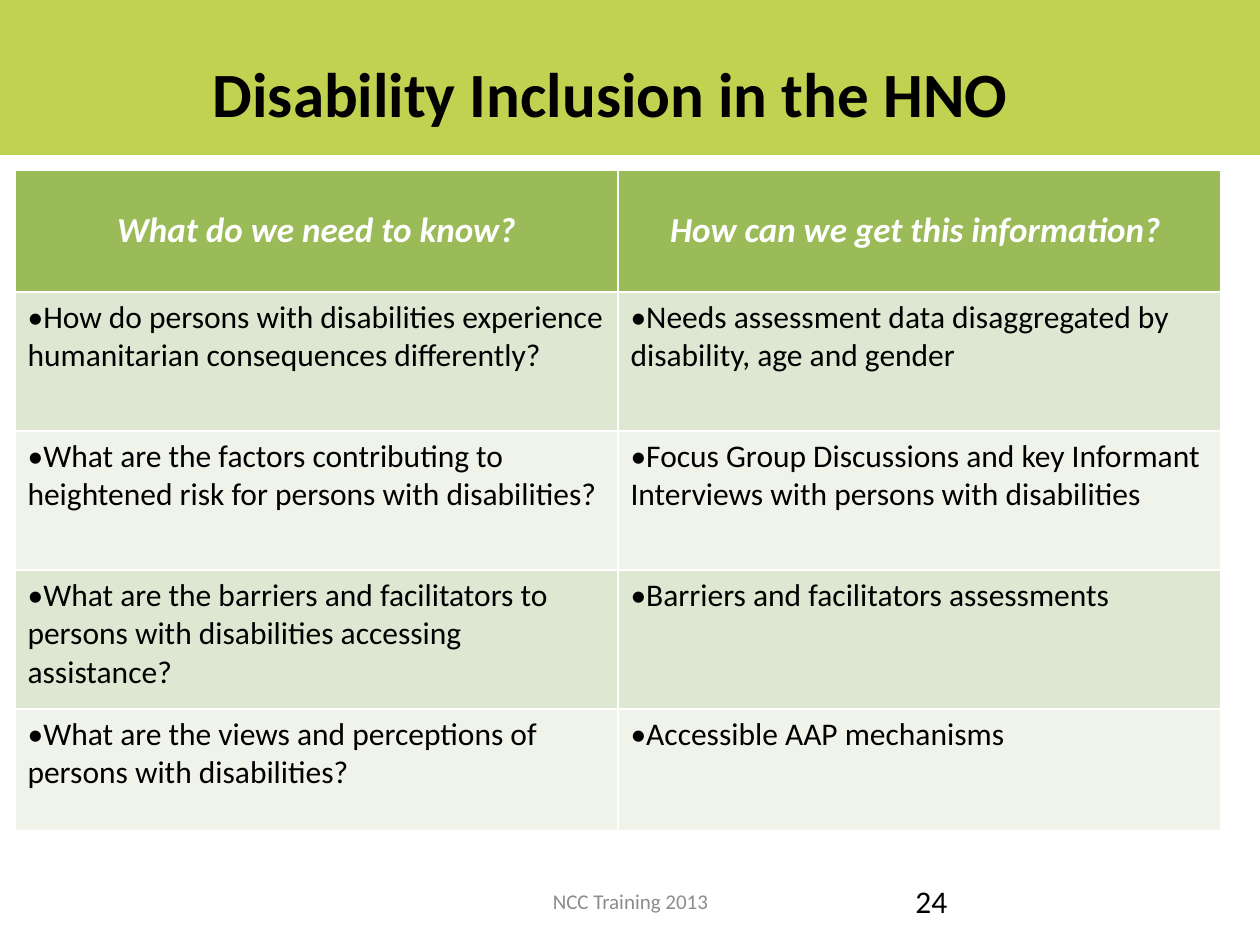
"""Build the Disability Inclusion in the HNO slide with its question table."""
from dataclasses import dataclass

from pptx import Presentation
from pptx import util as u
from pptx.dml.color import RGBColor
from pptx.enum import shapes, text

EMU_PER_PX = 914400 / 126


@dataclass(frozen=True)
class Theme:
    font: str = "Calibri"
    banner: str = "C1D150"
    header: str = "9BBB59"
    bands: tuple[str, str] = ("DEE7D1", "EFF3EA")
    black: str = "000000"
    white: str = "FFFFFF"
    grey: str = "8C8C8C"
    title_size: int = 36
    header_size: int = 20
    body_size: int = 18
    footer_size: int = 12


@dataclass(frozen=True)
class Box:
    left: int
    top: int
    width: int
    height: int

    def emu(self) -> tuple[int, ...]:
        return tuple(px(v) for v in (self.left, self.top, self.width, self.height))


@dataclass(frozen=True)
class Style:
    size: int
    color: str
    bold: bool = False
    italic: bool = False
    align: text.PP_ALIGN = text.PP_ALIGN.LEFT
    anchor: text.MSO_ANCHOR = text.MSO_ANCHOR.TOP


@dataclass(frozen=True)
class Label:
    words: str
    box: Box
    style: Style


THEME = Theme()
CENTER, MIDDLE = text.PP_ALIGN.CENTER, text.MSO_ANCHOR.MIDDLE
HEADER = Style(THEME.header_size, THEME.white, True, True, CENTER, MIDDLE)
BODY = Style(THEME.body_size, THEME.black)

BANNER = Box(0, -2, 1260, 157)
LABELS = (
    Label("NCC Training 2013", Box(431, 876, 399, 50),
          Style(THEME.footer_size, THEME.grey, align=CENTER, anchor=MIDDLE)),
    Label("24", Box(903, 876, 294, 50), BODY),
    Label("Disability Inclusion in the HNO", Box(34, 48, 1153, 89),
          Style(THEME.title_size, THEME.black, bold=True, align=CENTER)),
)
TABLE = Box(15, 170, 1206, 661)
ROW_HEIGHTS = (122, 139, 139, 139, 122)
ROWS = (
    ("What do we need to know?", "How can we get this information? "),
    ("•How do persons with disabilities experience humanitarian consequences differently?",
     "•Needs assessment data disaggregated by disability, age and gender"),
    ("•What are the factors contributing to heightened risk for persons with disabilities?",
     "•Focus Group Discussions and key Informant Interviews with persons with disabilities"),
    ("•What are the barriers and facilitators to persons with disabilities accessing assistance?",
     "•Barriers and facilitators assessments"),
    ("•What are the views and perceptions of persons with disabilities?",
     "•Accessible AAP mechanisms"),
)


def px(value: int) -> int:
    return round(value * EMU_PER_PX)


def write(frame, words: str, style: Style) -> None:
    frame.text = words
    paragraph = frame.paragraphs[0]
    paragraph.alignment = style.align
    font = paragraph.runs[0].font
    formats = {"name": THEME.font, "size": u.Pt(style.size),
               "bold": style.bold, "italic": style.italic}
    for name, value in formats.items():
        setattr(font, name, value)
    font.color.rgb = RGBColor.from_string(style.color)


def paint(target, color: str) -> None:
    target.fill.solid()
    target.fill.fore_color.rgb = RGBColor.from_string(color)


def draw_banner(slide, box: Box) -> None:
    shape = slide.shapes.add_shape(shapes.MSO_SHAPE.RECTANGLE, *box.emu())
    shape.shadow.inherit = False
    paint(shape, THEME.banner)
    shape.line.fill.background()


def draw_label(slide, label: Label) -> None:
    frame = slide.shapes.add_textbox(*label.box.emu()).text_frame
    frame.word_wrap = True
    frame.vertical_anchor = label.style.anchor
    write(frame, label.words, label.style)


def draw_table(slide, box: Box) -> None:
    table = slide.shapes.add_table(len(ROWS), len(ROWS[0]), *box.emu()).table
    for row, height in zip(table.rows, ROW_HEIGHTS):
        row.height = px(height)
    for i, row_words in enumerate(ROWS):
        style = BODY if i else HEADER
        color = THEME.bands[(i - 1) % 2] if i else THEME.header
        for j, words in enumerate(row_words):
            cell = table.cell(i, j)
            paint(cell, color)
            cell.vertical_anchor = style.anchor
            write(cell.text_frame, words, style)


def main() -> None:
    presentation = Presentation()
    presentation.slide_width, presentation.slide_height = px(1260), px(945)
    slide = presentation.slides.add_slide(presentation.slide_layouts[6])
    draw_banner(slide, BANNER)
    for label in LABELS:
        draw_label(slide, label)
    draw_table(slide, TABLE)
    presentation.save("out.pptx")


if __name__ == "__main__":
    main()
